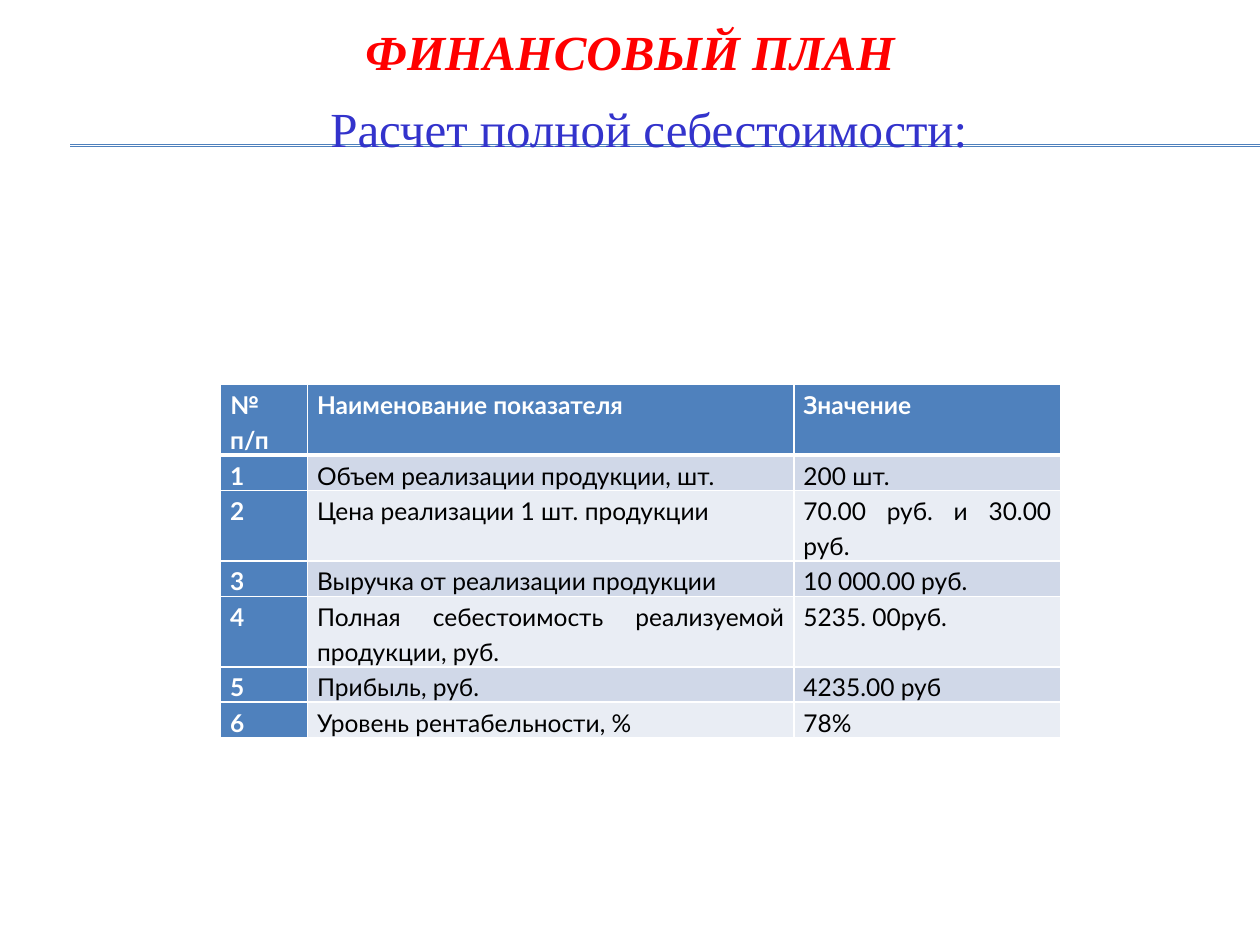
from lxml import etree
from pptx import Presentation
from pptx import util as u
from pptx.dml.color import RGBColor
from pptx.enum import shapes, text
from pptx.oxml import ns

RED = RGBColor(0xFF, 0x00, 0x00)
INDIGO = RGBColor(0x33, 0x33, 0xCC)
BLUE = RGBColor(0x4F, 0x81, 0xBD)
BAND_DARK = RGBColor(0xD0, 0xD8, 0xE8)
BAND_LIGHT = RGBColor(0xE9, 0xED, 0xF4)
WHITE = RGBColor(0xFF, 0xFF, 0xFF)
BLACK = RGBColor(0x00, 0x00, 0x00)

HEADING_FONT = "Times New Roman"
TABLE_FONT = "Lato"
COLUMN_SHARES = (0.69, 3.86, 2.12)
ROW_LINES = (1, 1, 2, 1, 2, 1, 1)
INDICATORS = (
    ("№ п/п", "Наименование показателя", "Значение"),
    ("1", "Объем реализации продукции, шт.", "200 шт."),
    ("2", "Цена реализации 1 шт. продукции", "70.00 руб. и 30.00 руб."),
    ("3", "Выручка от реализации продукции", "10 000.00 руб."),
    ("4", "Полная себестоимость реализуемой продукции, руб.", "5235. 00руб."),
    ("5", "Прибыль, руб.", "4235.00 руб"),
    ("6", "Уровень рентабельности, %", "78%"),
)


def write(frame, words, font, size, color, bold=False, italic=False,
          align=text.PP_ALIGN.CENTER, spacing=None):
    para = frame.paragraphs[0]
    para.alignment = align
    if spacing:
        para.line_spacing = spacing
    span = para.add_run()
    span.text = words
    span.font.name = font
    span.font.size = u.Pt(size)
    span.font.color.rgb = color
    span.font.bold = bold
    span.font.italic = italic


def add_rules(page, left, top, width, gap):
    """Two thin lines, one just below the other."""
    for y in (top, top + gap):
        rule = page.shapes.add_connector(
            shapes.MSO_CONNECTOR.STRAIGHT, left, y, left + width, y)
        rule.line.color.rgb = BLUE
        rule.line.width = u.Pt(0.75)
        etree.SubElement(rule._element.spPr, ns.qn("a:effectLst"))


def add_title(page, left, top, width, height):
    box = page.shapes.title
    box.left, box.top, box.width, box.height = left, top, width, height
    frame = box.text_frame
    frame.vertical_anchor = text.MSO_ANCHOR.MIDDLE
    frame.margin_bottom = u.Cm(1.07)
    write(frame, "ФИНАНСОВЫЙ ПЛАН", HEADING_FONT, 28, RED, bold=True, italic=True)


def add_subtitle(page, left, top, width, height):
    frame = page.shapes.add_textbox(left, top, width, height).text_frame
    frame.word_wrap = True
    frame.margin_top = u.Cm(0.25)
    write(frame, "Расчет полной себестоимости:", HEADING_FONT, 28, INDIGO)


def set_borders(cell, **widths):
    """Draw white borders; widths are points by side: L, R, T, B."""
    properties = cell._tc.get_or_add_tcPr()
    for side, points in widths.items():
        line = etree.SubElement(properties, ns.qn(f"a:ln{side}"), w=str(u.Pt(points)))
        fill = etree.SubElement(line, ns.qn("a:solidFill"))
        etree.SubElement(fill, ns.qn("a:srgbClr"), val=str(WHITE))


def add_indicators(page, left, top, width, line_height):
    table = page.shapes.add_table(
        len(INDICATORS), len(COLUMN_SHARES), left, top, width,
        line_height * sum(ROW_LINES)).table
    for column, share in zip(table.columns, COLUMN_SHARES):
        column.width = int(width * share / sum(COLUMN_SHARES))
    for row, lines in zip(table.rows, ROW_LINES):
        row.height = line_height * lines

    for r, record in enumerate(INDICATORS):
        for c, words in enumerate(record):
            cell = table.cell(r, c)
            heading = r == 0 or c == 0
            # Thick border between the header and the body
            set_borders(cell, L=1, R=1, T=3 if r == 1 else 1, B=3 if r == 0 else 1)
            cell.fill.solid()
            band = BAND_DARK if r % 2 else BAND_LIGHT
            cell.fill.fore_color.rgb = BLUE if heading else band
            cell.margin_left = cell.margin_right = u.Cm(0.19)
            cell.margin_top = cell.margin_bottom = 0
            write(cell.text_frame, words, TABLE_FONT, 14,
                  WHITE if heading else BLACK, bold=heading,
                  align=text.PP_ALIGN.JUSTIFY, spacing=1.2)


def main():
    deck = Presentation()
    deck.slide_width, deck.slide_height = u.Cm(25.4), u.Cm(19.05)
    page = deck.slides.add_slide(deck.slide_layouts[5])
    add_rules(page, u.Cm(1.42), u.Cm(2.92), u.Cm(23.98), u.Cm(0.03))
    add_title(page, u.Cm(1.27), u.Cm(-0.15), u.Cm(22.86), u.Cm(3.28))
    add_subtitle(page, u.Cm(1.27), u.Cm(1.73), u.Cm(23.62), u.Cm(15.21))
    add_indicators(page, u.Cm(4.45), u.Cm(7.75), u.Cm(16.94), u.Cm(0.71))
    deck.save("out.pptx")


if __name__ == "__main__":
    main()
